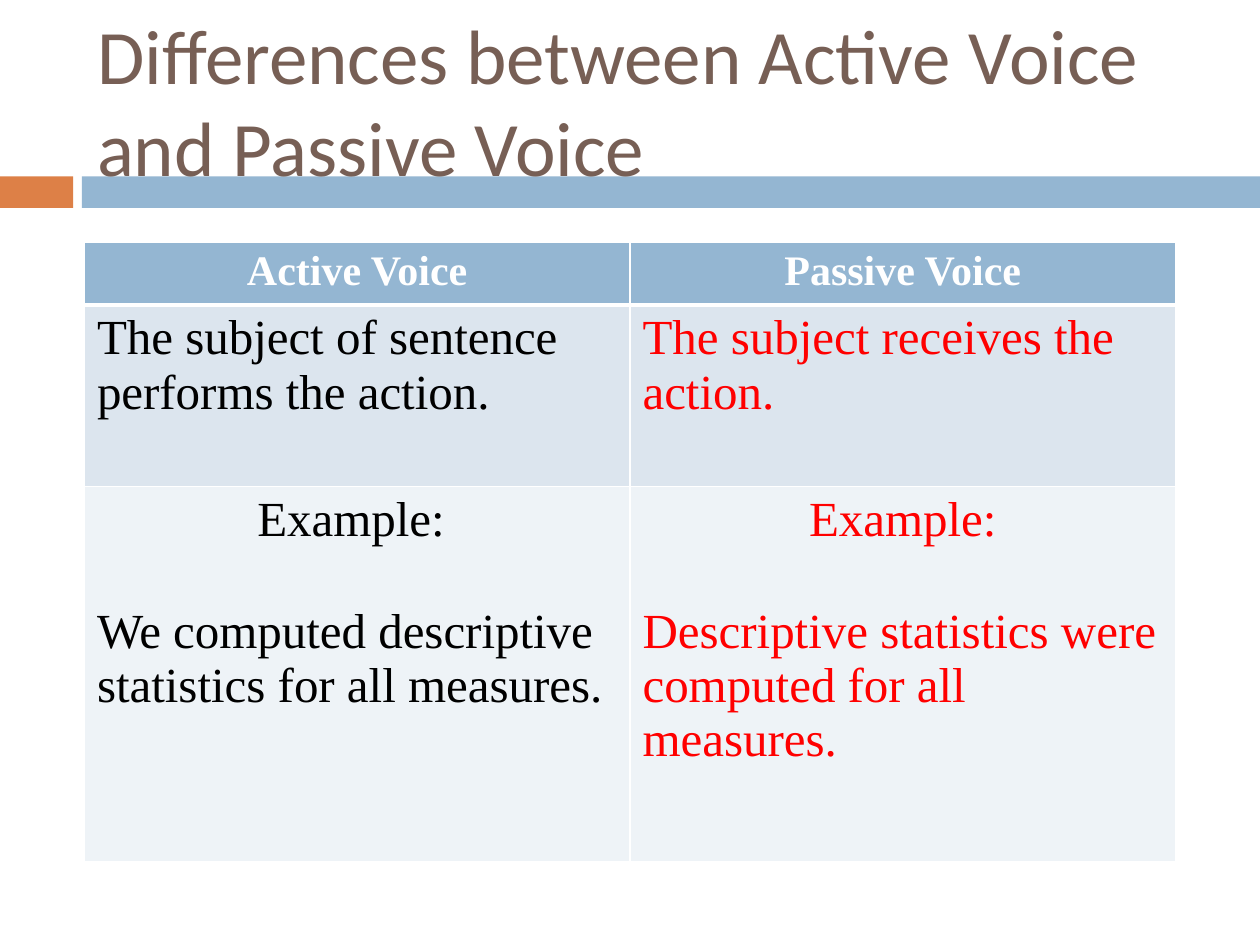
import dataclasses

import pptx
import pptx.dml.color
import pptx.enum.shapes
import pptx.enum.text
import pptx.oxml
import pptx.oxml.ns
import pptx.util

Inches = pptx.util.Inches
Pt = pptx.util.Pt
Align = pptx.enum.text.PP_ALIGN


@dataclasses.dataclass(frozen=True)
class Theme:
    heading: str = "775F55"
    orange: str = "DD8047"
    blue: str = "94B6D2"
    white: str = "FFFFFF"
    active: str = "000000"
    passive: str = "FF0000"
    row_fills: tuple = ("94B6D2", "DCE5EE", "EEF3F7")
    title_size: int = 44
    header_size: int = 24
    body_size: int = 28
    title_font: str = "Calibri"
    table_font: str = "Times New Roman"


THEME = Theme()
ROW_HEIGHTS = (0.5, 1.44, 2.98)
COLUMN_WIDTH = 4.33
COLUMNS = (
    (
        THEME.active,
        "Active Voice",
        "The subject of sentence performs the action.",
        ("Example: ", "We computed descriptive statistics for all measures."),
    ),
    (
        THEME.passive,
        "Passive Voice",
        "The subject receives the action.",
        ("Example:", "Descriptive statistics were computed for all measures."),
    ),
)


def rgb(value):
    return pptx.dml.color.RGBColor.from_string(value)


def apply_format(target, values):
    for name, value in values.items():
        setattr(target, name, value)


def write(para, text, font, size, color, bold=False):
    span = para.add_run()
    span.text = text
    apply_format(span.font, {"name": font, "size": Pt(size), "bold": bold})
    span.font.color.rgb = rgb(color)


def add_band(page, left, width, color):
    band = page.shapes.add_shape(
        pptx.enum.shapes.MSO_SHAPE.RECTANGLE,
        Inches(left), Inches(1.4), Inches(width), Inches(0.25),
    )
    band.shadow.inherit = False
    band.fill.solid()
    band.fill.fore_color.rgb = rgb(color)
    band.line.fill.background()


def place_title(page, text):
    title = page.shapes.title
    apply_format(title, {
        "left": Inches(0.67), "top": Inches(0.25),
        "width": Inches(8.92), "height": Inches(1.08),
    })
    apply_format(title.text_frame, {
        "word_wrap": True,
        "auto_size": pptx.enum.text.MSO_AUTO_SIZE.NONE,
        "vertical_anchor": pptx.enum.text.MSO_ANCHOR.MIDDLE,
    })
    para = title.text_frame.paragraphs[0]
    para.alignment = Align.LEFT
    write(para, text, THEME.title_font, THEME.title_size, THEME.heading)
    title.element.getparent().append(title.element)


def set_borders(cell, widths):
    properties = cell._tc.get_or_add_tcPr()
    for side, width in widths.items():
        properties.append(pptx.oxml.parse_xml(
            f'<a:ln{side} {pptx.oxml.ns.nsdecls("a")} w="{Pt(width)}">'
            f'<a:solidFill><a:srgbClr val="{THEME.white}"/></a:solidFill>'
            f'</a:ln{side}>'
        ))


def style_cell(cell, row):
    set_borders(cell, {
        "L": 1, "R": 1,
        "T": 3 if row == 1 else 1,
        "B": 3 if row == 0 else 1,
    })
    cell.fill.solid()
    cell.fill.fore_color.rgb = rgb(THEME.row_fills[row])


def fill_column(table, index, color, header, rule, example):
    cells = [table.cell(row, index) for row in range(len(ROW_HEIGHTS))]
    for row, cell in enumerate(cells):
        style_cell(cell, row)
    heading, statement, label = (cell.text_frame.paragraphs[0] for cell in cells)
    sentence = cells[2].text_frame.add_paragraph()
    heading.alignment = label.alignment = Align.CENTER
    label.space_after = Pt(33)
    write(heading, header, THEME.table_font, THEME.header_size, THEME.white, True)
    for para, text in zip((statement, label, sentence), (rule, *example)):
        write(para, text, THEME.table_font, THEME.body_size, color)


def add_comparison(page):
    table = page.shapes.add_table(
        len(ROW_HEIGHTS), len(COLUMNS), Inches(0.67), Inches(1.92),
        Inches(COLUMN_WIDTH * len(COLUMNS)), Inches(sum(ROW_HEIGHTS)),
    ).table
    for row, height in zip(table.rows, ROW_HEIGHTS):
        row.height = Inches(height)
    for index, content in enumerate(COLUMNS):
        table.columns[index].width = Inches(COLUMN_WIDTH)
        fill_column(table, index, *content)


def main():
    deck = pptx.Presentation()
    apply_format(deck, {"slide_width": Inches(10), "slide_height": Inches(7.5)})
    page = deck.slides.add_slide(deck.slide_layouts[5])
    add_band(page, 0, 0.58, THEME.orange)
    add_band(page, 0.65, 9.35, THEME.blue)
    place_title(page, "Differences between Active Voice and Passive Voice")
    add_comparison(page)
    deck.save("out.pptx")


if __name__ == "__main__":
    main()
